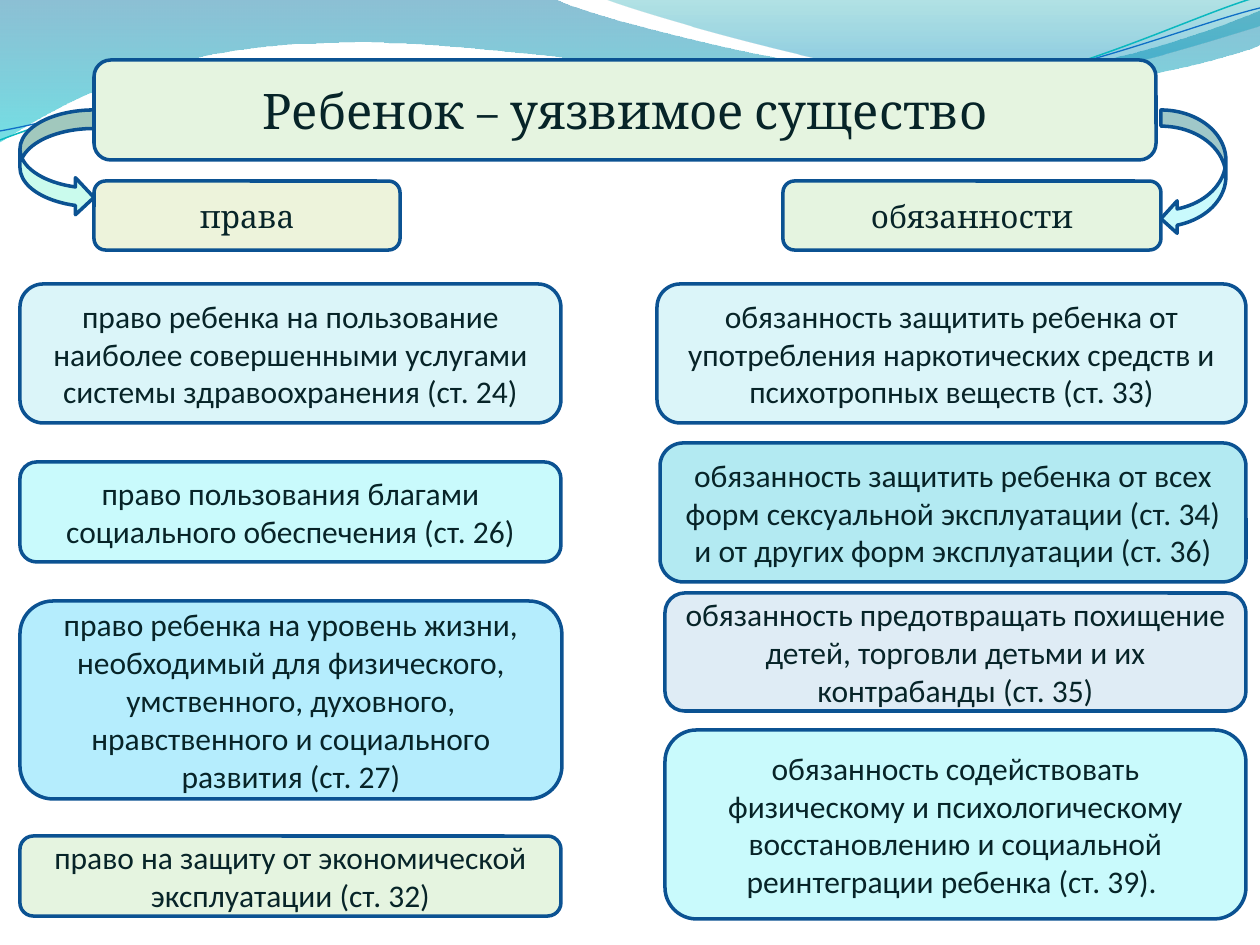
from dataclasses import dataclass

from lxml.etree import SubElement
from pptx import Presentation
from pptx.dml.color import RGBColor
from pptx.enum.shapes import MSO_SHAPE as Shape
from pptx.enum.text import MSO_ANCHOR as Anchor, MSO_AUTO_SIZE as AutoSize, PP_ALIGN as Align
from pptx.oxml.ns import qn
from pptx.util import Pt

SCALE = 914400 / 126


@dataclass(frozen=True)
class Theme:
    ink: str = "072428"
    outline: str = "0B5292"
    mint: str = "E5F4E0"
    olive: str = "EDF3DB"
    ice: str = "DBF5F9"
    aqua: str = "C9FAFC"
    sky: str = "B5EDFD"
    teal: str = "B3EAF2"
    mist: str = "DFECF5"
    seafoam: str = "CAFBED"
    heading_font: str = "Cambria"
    body_font: str = "Calibri"
    title_size: int = 28
    body_size: int = 18
    outline_width: float = 2


THEME = Theme()

WAVES = [
    ((-1, 0),
     [[(554, -1)],
      [(600, 21), (837, 79), (955, 79)],
      [(1075, 79), (1207, 33), (1260, 11)],
      [(1261, 45)],
      [(1239, 55), (1096, 96), (940, 95)],
      [(784, 95), (481, 35), (324, 43)],
      [(163, 45), (58, 105), (-1, 142)]],
     [(0, "0074A1", 45), (1, "00C6CF", 55)]),
    ((604, -1),
     [[(641, 14), (859, 78), (969, 82)],
      [(1078, 87), (1211, 40), (1260, 26)],
      [(1260, 0)]],
     [(0, "00A1A9", 30), (0.8, "008BBF", 45)]),
]

RIPPLES = [
    ((0, 140),
     [[(60, 117), (199, 72), (349, 66)],
      [(498, 59), (747, 112), (898, 101)],
      [(1050, 89), (1182, 19), (1257, -3)]],
     "0AB8BF", 0.85),
    ((0, 131),
     [[(59, 121), (207, 77), (357, 71)],
      [(508, 64), (752, 106), (903, 95)],
      [(1053, 84), (1186, 26), (1260, 8)]],
     "0F6FC6", 0.75),
]

RIGHTS = [
    ((0, 0, 541, 139), THEME.ice,
     "право ребенка на пользование наиболее совершенными услугами системы здравоохранения (ст. 24)"),
    ((0, 178, 541, 100), THEME.aqua,
     "право пользования благами социального обеспечения (ст. 26)"),
    ((0, 317, 542, 198), THEME.sky,
     "право ребенка на уровень жизни, необходимый для физического, умственного, "
     "духовного, нравственного и социального развития (ст. 27)"),
    ((0, 552, 541, 80), THEME.mint,
     "право на защиту от экономической эксплуатации (ст. 32)"),
]

DUTIES = [
    ((0, 0, 589, 139), THEME.ice,
     "обязанность защитить ребенка от употребления наркотических средств и психотропных веществ (ст. 33)"),
    ((3, 159, 586, 139), THEME.teal,
     "обязанность защитить ребенка от всех форм сексуальной эксплуатации (ст. 34) "
     "и от других форм эксплуатации (ст. 36)"),
    ((8, 309, 581, 118), THEME.mist,
     "обязанность предотвращать похищение детей, торговли детьми и их контрабанды (ст. 35)"),
    ((8, 446, 581, 189), THEME.aqua,
     "обязанность содействовать физическому и психологическому восстановлению "
     "и социальной реинтеграции ребенка (ст. 39). "),
]


def px(length):
    return round(length * SCALE)


def set_attributes(target, values):
    for name, value in values.items():
        setattr(target, name, value)


def add_outline(slide, start, segments, closed):
    builder = slide.shapes.build_freeform(*start, scale=SCALE)
    builder.add_line_segments([point for segment in segments for point in segment], close=closed)
    shape = builder.convert_to_shape()
    shape.shadow.inherit = False
    lines = shape.element.iter(qn("a:lnTo"))
    for segment, line in zip(segments, [[next(lines) for _ in segment] for segment in segments]):
        if len(segment) == 3:
            line[0].tag = qn("a:cubicBezTo")
            for extra in line[1:]:
                line[0].append(extra[0])
                extra.getparent().remove(extra)
    return shape


def draw_backdrop(slide):
    for start, segments, stops in WAVES:
        wave = add_outline(slide, start, segments, True)
        wave.line.fill.background()
        wave.fill.gradient()
        wave.fill.gradient_angle = 270
        for stop, (position, color, opacity) in zip(wave.fill.gradient_stops, stops):
            stop.position = position
            stop.color.rgb = RGBColor.from_string(color)
        for node, (_, _, opacity) in zip(wave.element.iter(qn("a:srgbClr")), stops):
            SubElement(node, qn("a:alpha"), val=str(opacity * 1000))
    for start, segments, color, width in RIPPLES:
        ripple = add_outline(slide, start, segments, False)
        ripple.fill.background()
        ripple.line.color.rgb = RGBColor.from_string(color)
        ripple.line.width = Pt(width)


def write(shape, text, font, size):
    frame = shape.text_frame
    frame.text = text
    set_attributes(frame, {"word_wrap": True, "auto_size": AutoSize.NONE,
                           "vertical_anchor": Anchor.MIDDLE})
    paragraph = frame.paragraphs[0]
    paragraph.alignment = Align.CENTER
    run_font = paragraph.runs[0].font
    set_attributes(run_font, {"name": font, "size": Pt(size)})
    run_font.color.rgb = RGBColor.from_string(THEME.ink)


def add_painted(slide, kind, box, color):
    shape = slide.shapes.add_shape(kind, *map(px, box))
    shape.shadow.inherit = False
    shape.fill.solid()
    shape.fill.fore_color.rgb = RGBColor.from_string(color)
    shape.line.color.rgb = RGBColor.from_string(THEME.outline)
    shape.line.width = Pt(THEME.outline_width)
    return shape


def place_title(slide, box, text):
    add_painted(slide, Shape.ROUNDED_RECTANGLE, box, THEME.mint)
    title = slide.shapes.title
    set_attributes(title, dict(zip(("left", "top", "width", "height"), map(px, box))))
    write(title, text, THEME.heading_font, THEME.title_size)
    slide.shapes.element.append(title.element)


def draw_heading(slide, box, text, color):
    heading = add_painted(slide, Shape.ROUNDED_RECTANGLE, box, color)
    write(heading, text, THEME.heading_font, THEME.body_size)


def draw_column(slide, origin, cards):
    left, top = origin
    for (x, y, width, height), color, text in cards:
        card = add_painted(slide, Shape.ROUNDED_RECTANGLE, (left + x, top + y, width, height), color)
        write(card, text, THEME.body_font, THEME.body_size)


def main():
    presentation = Presentation()
    set_attributes(presentation, {"slide_width": px(1260), "slide_height": px(945)})
    slide = presentation.slides.add_slide(presentation.slide_layouts[5])
    draw_backdrop(slide)
    place_title(slide, (94, 60, 1062, 100), "Ребенок – уязвимое существо")
    draw_column(slide, (20, 284), RIGHTS)
    draw_column(slide, (657, 284), DUTIES)
    draw_heading(slide, (94, 181, 306, 69), "права", THEME.olive)
    draw_heading(slide, (783, 181, 378, 69), "обязанности", THEME.mint)
    add_painted(slide, Shape.CURVED_RIGHT_ARROW, (20, 110, 74, 106), THEME.seafoam)
    add_painted(slide, Shape.CURVED_LEFT_ARROW, (1161, 110, 65, 125), THEME.aqua)
    presentation.save("out.pptx")


if __name__ == "__main__":
    main()
